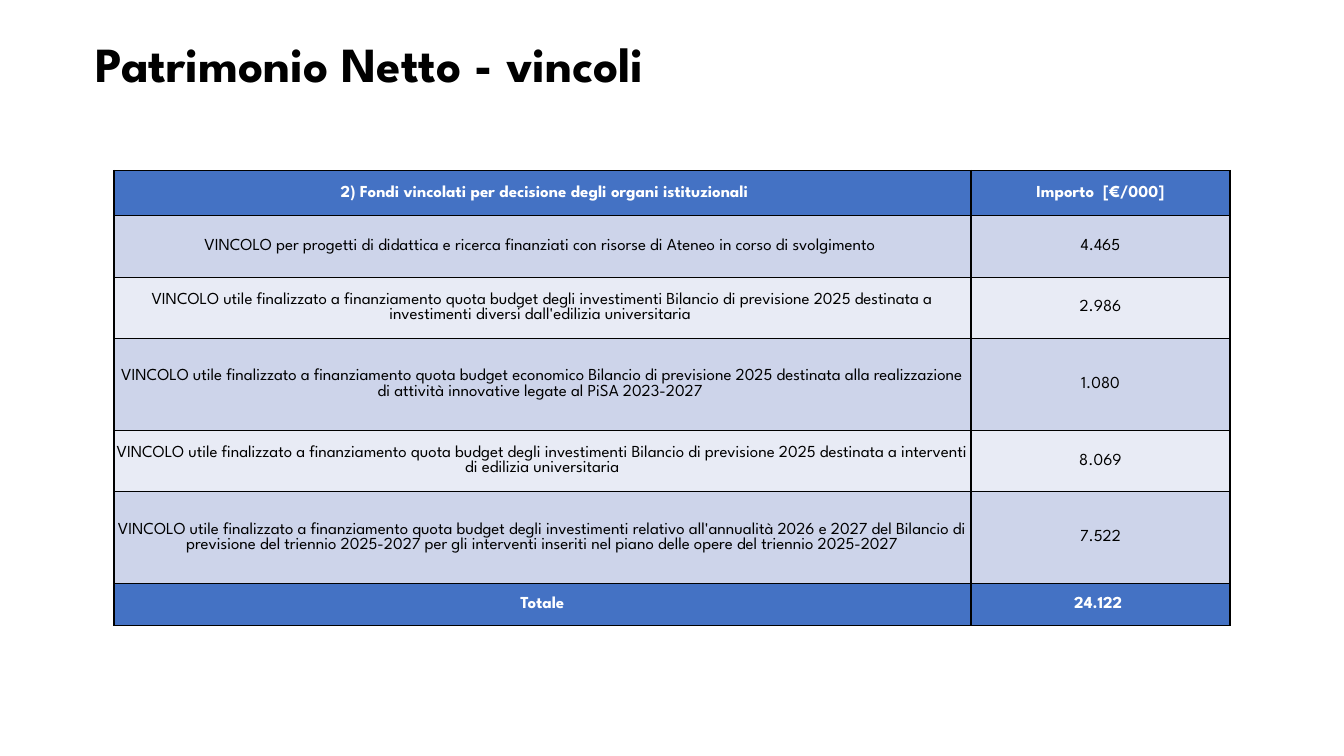
from dataclasses import dataclass

from lxml import etree
from pptx import Presentation
from pptx import util as u
from pptx.dml.color import RGBColor
from pptx.enum import text as t
from pptx.oxml.ns import qn
from pptx.slide import Slide
from pptx.table import _Cell
from pptx.text.text import TextFrame


@dataclass(frozen=True)
class Theme:
    font: str = "League Spartan"
    title_size: int = 35
    table_size: int = 12
    ink: str = "000000"
    light: str = "FFFFFF"
    accent: str = "4472C4"
    bands: tuple[str, str] = ("CDD4EA", "E8EBF5")
    border_width: int = 1


@dataclass(frozen=True)
class FundRow:
    label: str
    amount: str
    height: float
    emphasis: bool = False


THEME = Theme()
COLUMN_WIDTHS = (8.5, 2.57)
BUDGET = "VINCOLO utile finalizzato a finanziamento quota budget "
INVESTMENTS = BUDGET + "degli investimenti "
FUNDS = (
    FundRow(" 2) Fondi vincolati per decisione degli organi istituzionali",
            "Importo  [€/000]", 0.45, emphasis=True),
    FundRow("VINCOLO per progetti di didattica e ricerca finanziati con risorse "
            "di Ateneo in corso di svolgimento ", "4.465", 0.61),
    FundRow(INVESTMENTS + "Bilancio di previsione 2025 destinata a investimenti "
            "diversi dall'edilizia universitaria ", "2.986", 0.61),
    FundRow(BUDGET + "economico Bilancio di previsione 2025 destinata alla "
            "realizzazione di attività innovative legate al PiSA 2023-2027 ",
            "1.080", 0.91),
    FundRow(INVESTMENTS + "Bilancio di previsione 2025 destinata a interventi "
            "di edilizia universitaria", "8.069", 0.61),
    FundRow(INVESTMENTS + "relativo all'annualità 2026 e 2027 del Bilancio di "
            "previsione del triennio 2025-2027 per gli interventi inseriti nel "
            "piano delle opere del triennio 2025-2027", "7.522", 0.91),
    FundRow("Totale", "24.122 ", 0.42, emphasis=True),
)


def write(frame: TextFrame, content: str, *, size: int, color: str, bold: bool,
          align: t.PP_ALIGN, spacing: float = 1.0) -> None:
    paragraph = frame.paragraphs[0]
    paragraph.alignment = align
    paragraph.line_spacing = spacing
    run = paragraph.add_run()
    run.text = content
    run.font.name = THEME.font
    run.font.size = u.Pt(size)
    run.font.bold = bold
    run.font.color.rgb = RGBColor.from_string(color)


def format_cell(cell: _Cell, fill: str) -> None:
    cell.vertical_anchor = t.MSO_ANCHOR.MIDDLE
    cell.margin_left = cell.margin_right = u.Inches(0.02)
    cell.margin_top = cell.margin_bottom = 0
    # Borders come before the fill in the cell properties
    properties = cell._tc.get_or_add_tcPr()
    for side in ("a:lnL", "a:lnR", "a:lnT", "a:lnB"):
        line = etree.SubElement(properties, qn(side),
                                w=str(u.Pt(THEME.border_width)))
        solid = etree.SubElement(line, qn("a:solidFill"))
        etree.SubElement(solid, qn("a:srgbClr"), val=THEME.ink)
    cell.fill.solid()
    cell.fill.fore_color.rgb = RGBColor.from_string(fill)


def add_title(slide: Slide, content: str) -> None:
    title = slide.shapes.title
    title.left, title.top = u.Inches(0.85), u.Inches(0.35)
    title.width, title.height = u.Inches(11.65), u.Inches(1.09)
    frame = title.text_frame
    frame.word_wrap = True
    frame.auto_size = t.MSO_AUTO_SIZE.NONE
    frame.vertical_anchor = t.MSO_ANCHOR.TOP
    write(frame, content, size=THEME.title_size, color=THEME.ink, bold=True,
          align=t.PP_ALIGN.LEFT, spacing=0.9)


def add_funds_table(slide: Slide, funds: tuple[FundRow, ...]) -> None:
    table = slide.shapes.add_table(
        len(funds), len(COLUMN_WIDTHS), u.Inches(1.13), u.Inches(1.69),
        u.Inches(sum(COLUMN_WIDTHS)),
        u.Inches(sum(fund.height for fund in funds))).table
    for column, width in zip(table.columns, COLUMN_WIDTHS):
        column.width = u.Inches(width)
    for index, fund in enumerate(funds):
        table.rows[index].height = u.Inches(fund.height)
        fill = THEME.accent if fund.emphasis else THEME.bands[(index - 1) % 2]
        color = THEME.light if fund.emphasis else THEME.ink
        for cell, content in zip(table.rows[index].cells,
                                 (fund.label, fund.amount)):
            format_cell(cell, fill)
            write(cell.text_frame, content, size=THEME.table_size, color=color,
                  bold=fund.emphasis, align=t.PP_ALIGN.CENTER)


def main() -> None:
    deck = Presentation()
    deck.slide_width, deck.slide_height = u.Inches(13.33), u.Inches(7.5)
    # Title-only layout
    slide = deck.slides.add_slide(deck.slide_layouts[5])
    add_title(slide, "Patrimonio Netto - vincoli")
    add_funds_table(slide, FUNDS)
    deck.save("out.pptx")


if __name__ == "__main__":
    main()
